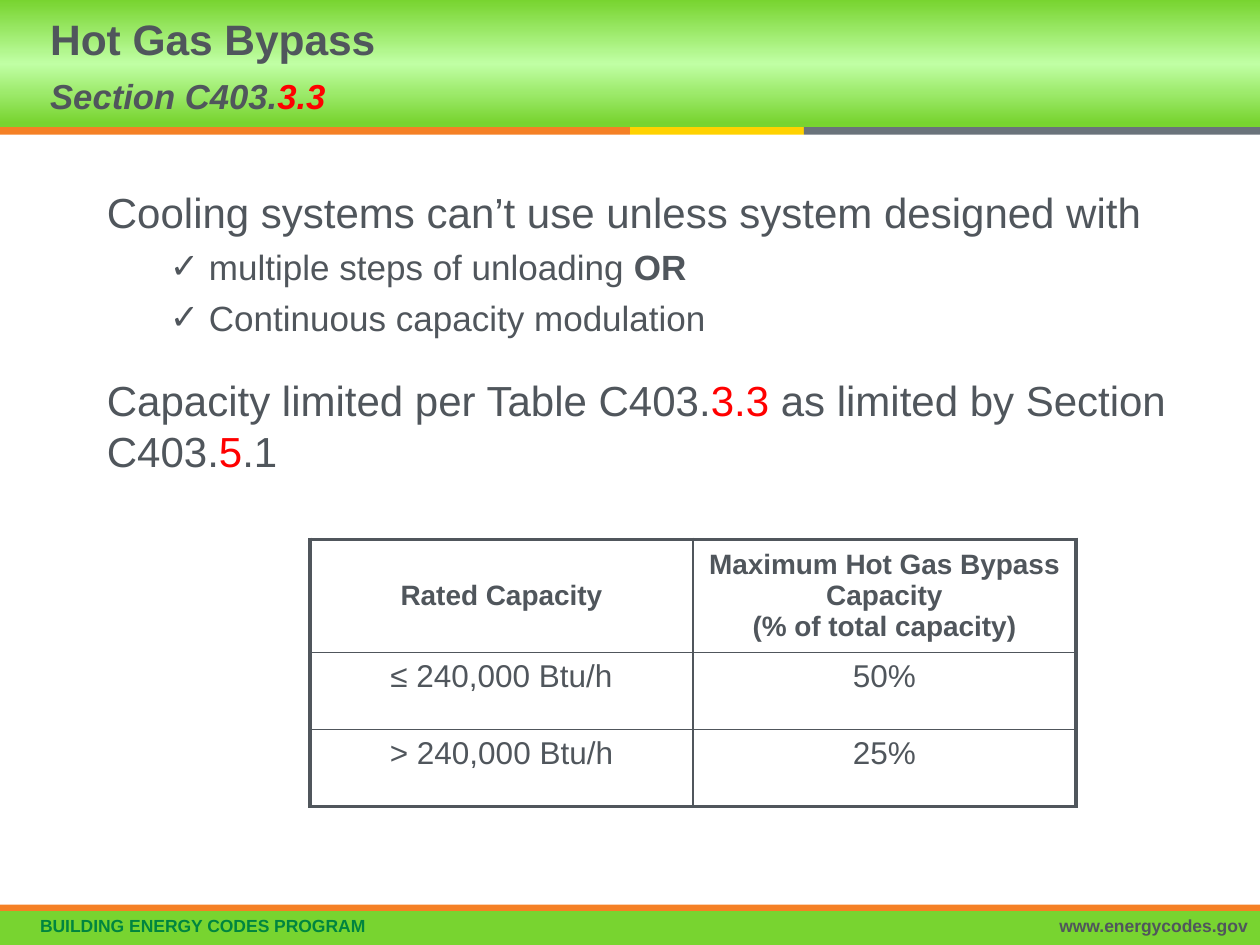
from copy import deepcopy

from lxml import etree
from pptx import Presentation
from pptx.dml.color import RGBColor
from pptx.enum.shapes import MSO_SHAPE
from pptx.enum.text import MSO_ANCHOR, PP_ALIGN
from pptx.oxml.ns import qn
from pptx.util import Inches, Pt

RECT = MSO_SHAPE.RECTANGLE
TOP, MIDDLE = MSO_ANCHOR.TOP, MSO_ANCHOR.MIDDLE
LEFT, CENTER, RIGHT = PP_ALIGN.LEFT, PP_ALIGN.CENTER, PP_ALIGN.RIGHT
COLS, ROWS = 100, 75
COLORS = {
    "text": "50565C", "red": "FF0000", "program": "00853F", "green": "78D430",
    "light": "C0FFA4", "orange": "F58025", "yellow": "FFD200", "gray": "6A737B",
}


class SlideBuilder:
    """Hold the style, the grid and the current slide."""

    def __init__(self, prs, font="Arial"):
        self.font = font
        self.slide = prs.slides.add_slide(prs.slide_layouts[6])
        self.col = prs.slide_width / COLS
        self.row = prs.slide_height / ROWS

    def place(self, x, y, w, h):
        return [round(n) for n in (x * self.col, y * self.row, w * self.col, h * self.row)]

    def style(self, r, size, color="text", bold=False, italic=False):
        r.font.name, r.font.size = self.font, Pt(size)
        r.font.bold, r.font.italic = bold, italic
        r.font.color.rgb = RGBColor.from_string(COLORS[color])

    def bar(self, x, y, w, h, color):
        sp = self.slide.shapes.add_shape(RECT, *self.place(x, y, w, h))
        sp.shadow.inherit = False
        sp.line.fill.background()
        sp.fill.solid()
        sp.fill.fore_color.rgb = RGBColor.from_string(COLORS[color])
        return sp

    def gradient_bar(self, x, y, w, h, stops):
        fill = self.bar(x, y, w, h, stops[0][1]).fill
        fill.gradient()
        fill.gradient_angle = 270
        last = fill.gradient_stops[-1]._gs
        last.addnext(deepcopy(last))
        for stop, (position, color) in zip(fill.gradient_stops, stops):
            stop.position = position
            stop.color.rgb = RGBColor.from_string(COLORS[color])

    def text(self, x, y, w, h, anchor=TOP):
        tf = self.slide.shapes.add_textbox(*self.place(x, y, w, h)).text_frame
        tf.word_wrap = True
        tf.vertical_anchor = anchor
        return tf

    def paragraph(self, tf, runs, size, align=LEFT, before=0, spacing=None, bullet=None):
        p = tf.paragraphs[0]
        if p.runs:
            p = tf.add_paragraph()
        if bullet:
            pPr = p._p.get_or_add_pPr()
            pPr.set("marL", str(Inches(0.81)))
            pPr.set("indent", str(-Inches(0.31)))
            etree.SubElement(pPr, qn("a:buFont"), typeface=self.font)
            etree.SubElement(pPr, qn("a:buChar"), char=bullet)
        p.alignment, p.space_before, p.line_spacing = align, Pt(before), spacing
        for text, look in runs:
            r = p.add_run()
            r.text = text
            self.style(r, size, **look)

    def border(self, cell, side, width):
        ln = etree.SubElement(cell._tc.get_or_add_tcPr(), qn(f"a:ln{side}"), w=str(Pt(width)))
        fill = etree.SubElement(ln, qn("a:solidFill"))
        etree.SubElement(fill, qn("a:srgbClr"), val=COLORS["text"])

    def table(self, x, y, w, heights, rows, outer=2.25, inner=1):
        n, m = len(rows), len(rows[0])
        frame = self.slide.shapes.add_table(n, m, *self.place(x, y, w, sum(heights)))
        table = frame.table
        table.first_row = table.horz_banding = False
        for i, values in enumerate(rows):
            table.rows[i].height = round(heights[i] * self.row)
            header = i == 0
            for j, value in enumerate(values):
                cell = table.cell(i, j)
                edges = {"L": j == 0, "R": j == m - 1, "T": header, "B": i == n - 1}
                for side, is_outer in edges.items():
                    self.border(cell, side, outer if is_outer else inner)
                cell.fill.background()
                cell.vertical_anchor = MIDDLE if header else TOP
                p = cell.text_frame.paragraphs[0]
                p.text = value
                p.alignment = CENTER
                for r in p.runs:
                    self.style(r, 16 if header else 18, bold=header)


def main():
    prs = Presentation()
    prs.slide_width, prs.slide_height = Inches(10), Inches(7.5)
    s = SlideBuilder(prs)

    s.gradient_bar(0, 0, COLS, 10.1, [(0, "green"), (0.5, "light"), (0.97, "green")])
    x = 0
    for w, color in ((50, "orange"), (13.8, "yellow"), (36.2, "gray")):
        s.bar(x, 10.1, w, 0.6, color)
        x += w
    s.bar(0, 72.3, COLS, 2.7, "green")
    s.bar(0, 71.8, COLS, 0.5, "orange")

    footers = (
        (2.2, 70, "BUILDING ENERGY CODES PROGRAM", "program", LEFT),
        (59.9, 40.1, "www.energycodes.gov", "text", RIGHT),
    )
    for x, w, text, color, align in footers:
        tf = s.text(x, 72.3, w, 2.6, MIDDLE)
        s.paragraph(tf, [(text, {"color": color, "bold": True})], 10, align, spacing=0.9)

    tf = s.text(3, 0, 73.3, 10.1, MIDDLE)
    s.paragraph(tf, [("Hot Gas Bypass", {"bold": True})], 24.3, spacing=Pt(30))
    subtitle = {"bold": True, "italic": True}
    s.paragraph(tf, [("Section C403.", subtitle), ("3.3", {"color": "red", **subtitle})],
                19.8, spacing=Pt(30))

    red = {"color": "red"}
    tf = s.text(7.5, 14.3, 88.1, 26)
    s.paragraph(tf, [("Cooling systems can’t use unless system designed with", {})], 24)
    for runs in (
        [("multiple steps of unloading ", {}), ("OR", {"bold": True})],
        [("Continuous capacity modulation", {})],
    ):
        s.paragraph(tf, runs, 20, before=5, bullet="✓")
    s.paragraph(tf, [("Capacity limited per Table C403.", {}), ("3.3", red),
                     (" as limited by Section C403.", {}), ("5", red), (".1", {})],
                24, before=21)

    s.table(24.6, 42.8, 60.8, [8.4, 6.1, 6.1], [
        ("Rated Capacity", "Maximum Hot Gas Bypass Capacity\v(% of total capacity)"),
        ("≤ 240,000 Btu/h", "50%"),
        ("> 240,000 Btu/h", "25%"),
    ])
    prs.save("out.pptx")


if __name__ == "__main__":
    main()
